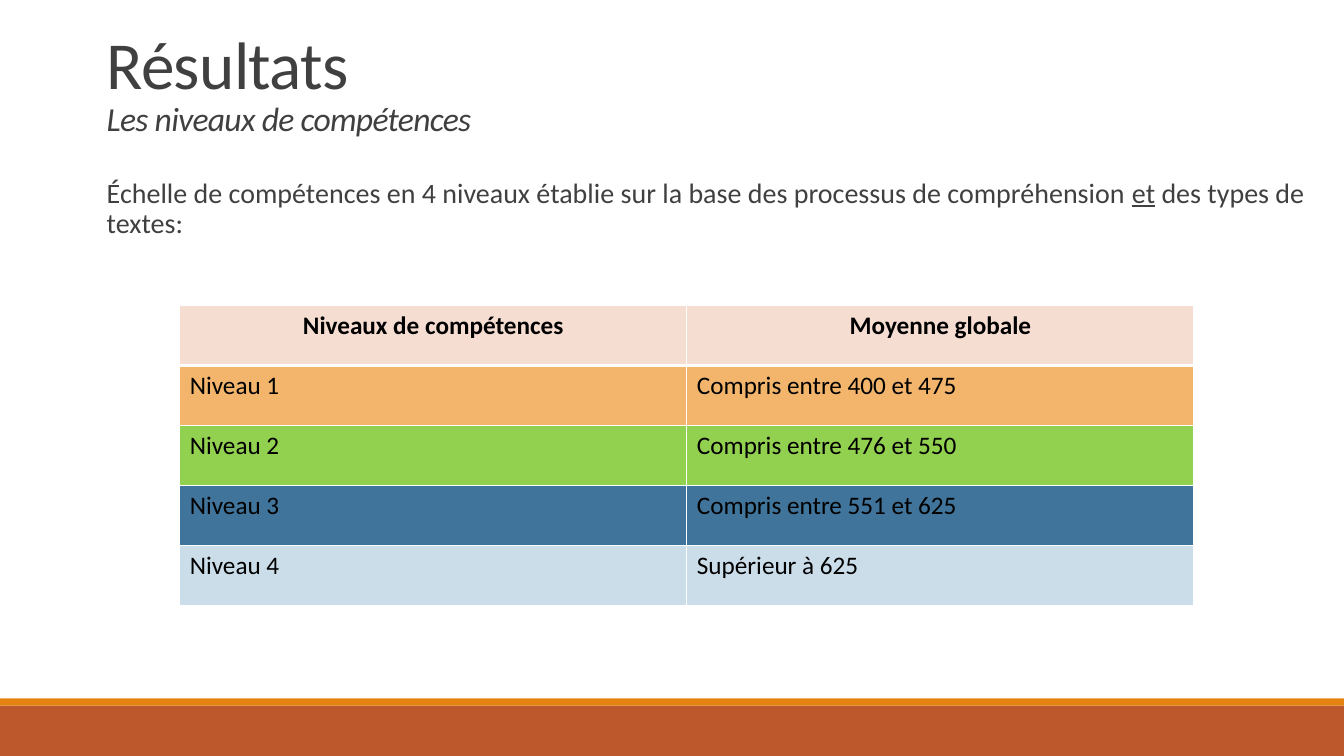
from pptx import Presentation
from pptx.dml.color import RGBColor
from pptx.enum.shapes import MSO_SHAPE
from pptx.enum.text import MSO_ANCHOR, PP_ALIGN
from pptx.oxml.ns import qn
from pptx.util import Cm, Pt
from lxml.etree import SubElement

COLORS = {
    "text": "404040",
    "table_text": "000000",
    "border": "FFFFFF",
    "footer": "BD582C",
    "footer_edge": "E48312",
    "header": "F5DDD2",
}
SLIDE_WIDTH, SLIDE_HEIGHT = 33.87, 19.05
HEADINGS = ("Niveaux de compétences", "Moyenne globale")
LEVELS = [
    ("Niveau 1", "Compris entre 400 et 475", "F3B56C"),
    ("Niveau 2", "Compris entre 476 et 550", "92D050"),
    ("Niveau 3", "Compris entre 551 et 625", "40749B"),
    ("Niveau 4", "Supérieur à 625", "CCDDEA"),
]


def rgb(value):
    return RGBColor.from_string(value)


def add_text(paragraph, text, size=20, color=COLORS["text"], bold=False,
             italic=False, underline=False, tracking=None):
    """Append a formatted run; tracking is in points."""
    run = paragraph.add_run()
    run.text = text
    font = run.font
    font.name = "Calibri"
    font.size = Pt(size)
    font.color.rgb = rgb(color)
    font.bold, font.italic, font.underline = bold, italic, underline
    if tracking is not None:
        run._r.get_or_add_rPr().set("spc", str(round(tracking * 100)))


def add_text_box(slide, left, top, width, height, anchor=MSO_ANCHOR.TOP):
    """Add an empty wrapping text box and return its first paragraph."""
    shape = slide.shapes.add_textbox(Cm(left), Cm(top), Cm(width), Cm(height))
    frame = shape.text_frame
    frame.word_wrap = True
    frame.vertical_anchor = anchor
    return frame.paragraphs[0]


def add_bar(slide, top, height, color):
    shape = slide.shapes.add_shape(
        MSO_SHAPE.RECTANGLE, 0, Cm(top), Cm(SLIDE_WIDTH), Cm(height))
    shape.shadow.inherit = False
    shape.fill.solid()
    shape.fill.fore_color.rgb = rgb(color)
    shape.line.fill.background()


def set_borders(cell, top=1, bottom=1):
    properties = cell._tc.get_or_add_tcPr()
    for side, width in (("L", 1), ("R", 1), ("T", top), ("B", bottom)):
        line = SubElement(properties, qn(f"a:ln{side}"), w=str(Pt(width)))
        fill = SubElement(line, qn("a:solidFill"))
        SubElement(fill, qn("a:srgbClr"), val=COLORS["border"])


def add_levels_table(slide, left, top, column_width, row_height):
    rows = [(*HEADINGS, COLORS["header"]), *LEVELS]
    table = slide.shapes.add_table(
        len(rows), len(HEADINGS), Cm(left), Cm(top),
        Cm(column_width * len(HEADINGS)), Cm(row_height * len(rows))).table
    table.horz_banding = False
    for column in table.columns:
        column.width = Cm(column_width)
    for row_index, (*texts, color) in enumerate(rows):
        is_header = row_index == 0
        table.rows[row_index].height = Cm(row_height)
        for column_index, text in enumerate(texts):
            cell = table.cell(row_index, column_index)
            set_borders(cell, top=3 if row_index == 1 else 1,
                        bottom=3 if is_header else 1)
            cell.fill.solid()
            cell.fill.fore_color.rgb = rgb(color)
            paragraph = cell.text_frame.paragraphs[0]
            paragraph.alignment = PP_ALIGN.CENTER if is_header else PP_ALIGN.LEFT
            add_text(paragraph, text, size=18, color=COLORS["table_text"],
                     bold=is_header)


def main():
    presentation = Presentation()
    presentation.slide_width = Cm(SLIDE_WIDTH)
    presentation.slide_height = Cm(SLIDE_HEIGHT)
    slide = presentation.slides.add_slide(presentation.slide_layouts[6])

    add_bar(slide, 17.78, 1.27, COLORS["footer"])
    add_bar(slide, 17.6, 0.18, COLORS["footer_edge"])

    title = add_text_box(slide, 2.44, 0.48, 29.69, 3.12, MSO_ANCHOR.BOTTOM)
    title.line_spacing = 0.85
    add_text(title, "Résultats", size=48, tracking=-0.5)
    title.add_line_break()
    add_text(title, "Les niveaux de compétences", size=24, italic=True,
             tracking=-0.5)

    intro = add_text_box(slide, 2.44, 4.39, 30.88, 2.49)
    intro.line_spacing = 0.9
    intro.space_before, intro.space_after = Pt(12), Pt(2)
    add_text(intro, "Échelle de compétences en 4 niveaux établie sur la base "
                    "des processus de compréhension ")
    add_text(intro, "et", underline=True)
    add_text(intro, " des types de textes:")

    add_levels_table(slide, 4.53, 7.7, 12.78, 1.51)
    presentation.save("out.pptx")


if __name__ == "__main__":
    main()
